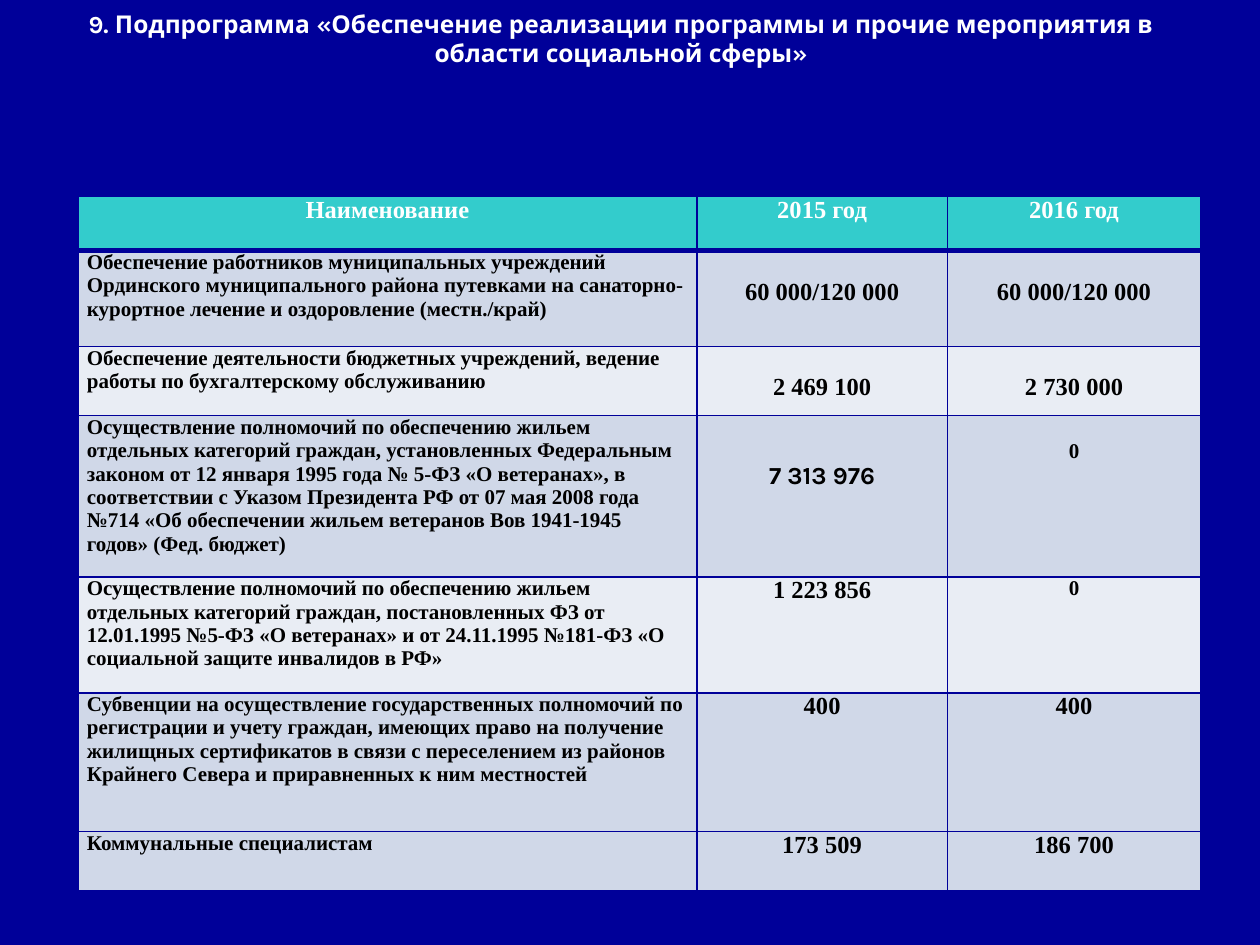
from dataclasses import dataclass

import pptx
import pptx.dml.color
import pptx.enum.text
import pptx.oxml.ns
import pptx.util
from lxml import etree
from pptx.dml.color import RGBColor
from pptx.util import Inches, Pt

NAVY = RGBColor(0x00, 0x00, 0x99)
TEAL = RGBColor(0x33, 0xCC, 0xCC)
BLUE_BAND = RGBColor(0xD0, 0xD8, 0xE8)
PALE_BAND = RGBColor(0xE9, 0xED, 0xF4)
WHITE = RGBColor(0xFF, 0xFF, 0xFF)
BLACK = RGBColor(0x00, 0x00, 0x00)
SERIF = "Times New Roman"
SANS = "Karla"
CENTER = pptx.enum.text.PP_ALIGN.CENTER
LEFT = pptx.enum.text.PP_ALIGN.LEFT
COLUMN_WIDTHS = (4.91, 1.99, 2.01)

TITLE = ("9. Подпрограмма «Обеспечение реализации программы и прочие "
         "мероприятия в области социальной сферы»")


@dataclass
class Entry:
    text: str
    size: int = 14
    top: float = 0
    font: str = SERIF
    color: RGBColor = BLACK
    align: int = CENTER


@dataclass
class Row:
    height: float
    fill: RGBColor
    entries: tuple[Entry, Entry, Entry]


def name(text: str) -> Entry:
    return Entry(text, size=12, align=LEFT)


def heading(text: str) -> Entry:
    return Entry(text, color=WHITE)


ROWS = (
    Row(0.43, TEAL, (heading("Наименование"), heading("2015 год"), heading("2016 год"))),
    Row(0.76, BLUE_BAND, (
        name("Обеспечение работников муниципальных учреждений Ординского муниципального "
             "района путевками на санаторно-курортное лечение и оздоровление (местн./край)"),
        Entry("60 000/120 000", top=0.22), Entry("60 000/120 000", top=0.22))),
    Row(0.55, PALE_BAND, (
        name("Обеспечение деятельности бюджетных учреждений, ведение работы по "
             "бухгалтерскому обслуживанию"),
        Entry("2 469 100", top=0.22), Entry("2 730 000", top=0.22))),
    Row(1.28, BLUE_BAND, (
        name("Осуществление полномочий по обеспечению жильем отдельных категорий граждан, "
             "установленных Федеральным законом от 12 января 1995 года № 5-ФЗ «О ветеранах», "
             "в соответствии с Указом Президента РФ от 07 мая 2008 года №714 «Об обеспечении "
             "жильем ветеранов Вов 1941-1945 годов» (Фед. бюджет)"),
        Entry("7 313 976", top=0.37, font=SANS), Entry("0", size=12, top=0.19))),
    Row(0.92, PALE_BAND, (
        name("Осуществление полномочий по обеспечению жильем отдельных категорий граждан, "
             "постановленных ФЗ от 12.01.1995 №5-ФЗ «О ветеранах» и от 24.11.1995 №181-ФЗ "
             "«О социальной защите инвалидов в РФ»"),
        Entry("1 223 856"), Entry("0", size=12))),
    Row(1.1, BLUE_BAND, (
        name("Субвенции на осуществление государственных полномочий по регистрации и учету "
             "граждан, имеющих право на получение жилищных сертификатов в связи с "
             "переселением из районов Крайнего Севера и приравненных к ним местностей"),
        Entry("400"), Entry("400"))),
    Row(0.47, BLUE_BAND, (
        name("Коммунальные специалистам"), Entry("173 509"), Entry("186 700"))),
)


def write(tf: pptx.text.text.TextFrame, entry: Entry) -> None:
    tf.text = entry.text
    p = tf.paragraphs[0]
    p.alignment = entry.align
    for r in p.runs:
        r.font.name = entry.font
        r.font.size = Pt(entry.size)
        r.font.bold = True
        r.font.color.rgb = entry.color


def set_borders(cell: pptx.table._Cell, top: float, bottom: float) -> None:
    """Draw the four cell edges; they must precede the fill in the XML."""
    tcPr = cell._tc.get_or_add_tcPr()
    widths = {"lnL": 1, "lnR": 1, "lnT": top, "lnB": bottom}
    for i, (tag, width) in enumerate(widths.items()):
        ln = etree.Element(pptx.oxml.ns.qn(f"a:{tag}"), w=str(Pt(width)))
        fill = etree.SubElement(ln, pptx.oxml.ns.qn("a:solidFill"))
        etree.SubElement(fill, pptx.oxml.ns.qn("a:srgbClr"), val=str(NAVY))
        tcPr.insert(i, ln)


def add_title(s: pptx.slide.Slide) -> None:
    sp = s.shapes.add_textbox(Inches(0.43), Inches(0), Inches(9), Inches(0.84))
    tf = sp.text_frame
    tf.word_wrap = True
    tf.margin_top = Inches(0.07)
    write(tf, Entry(TITLE, font=SANS, color=WHITE))


def add_budget_table(s: pptx.slide.Slide) -> None:
    height = sum(row.height for row in ROWS)
    table = s.shapes.add_table(len(ROWS), len(COLUMN_WIDTHS), Inches(0.62), Inches(1.56),
                               Inches(sum(COLUMN_WIDTHS)), Inches(height)).table
    table.horz_banding = False
    for column, width in zip(table.columns, COLUMN_WIDTHS):
        column.width = Inches(width)
    for i, row in enumerate(ROWS):
        table.rows[i].height = Inches(row.height)
        for cell, entry in zip(table.rows[i].cells, row.entries):
            cell.margin_left = cell.margin_right = Inches(0.07)
            cell.margin_top = Inches(entry.top)
            cell.margin_bottom = Inches(0)
            cell.fill.solid()
            cell.fill.fore_color.rgb = row.fill
            set_borders(cell, top=3 if i == 1 else 1, bottom=3 if i == 0 else 1)
            write(cell.text_frame, entry)


def main() -> None:
    prs = pptx.Presentation()
    prs.slide_width = Inches(10)
    prs.slide_height = Inches(7.5)
    s = prs.slides.add_slide(prs.slide_layouts[6])
    s.background.fill.solid()
    s.background.fill.fore_color.rgb = NAVY
    add_title(s)
    add_budget_table(s)
    prs.save("out.pptx")


if __name__ == "__main__":
    main()
